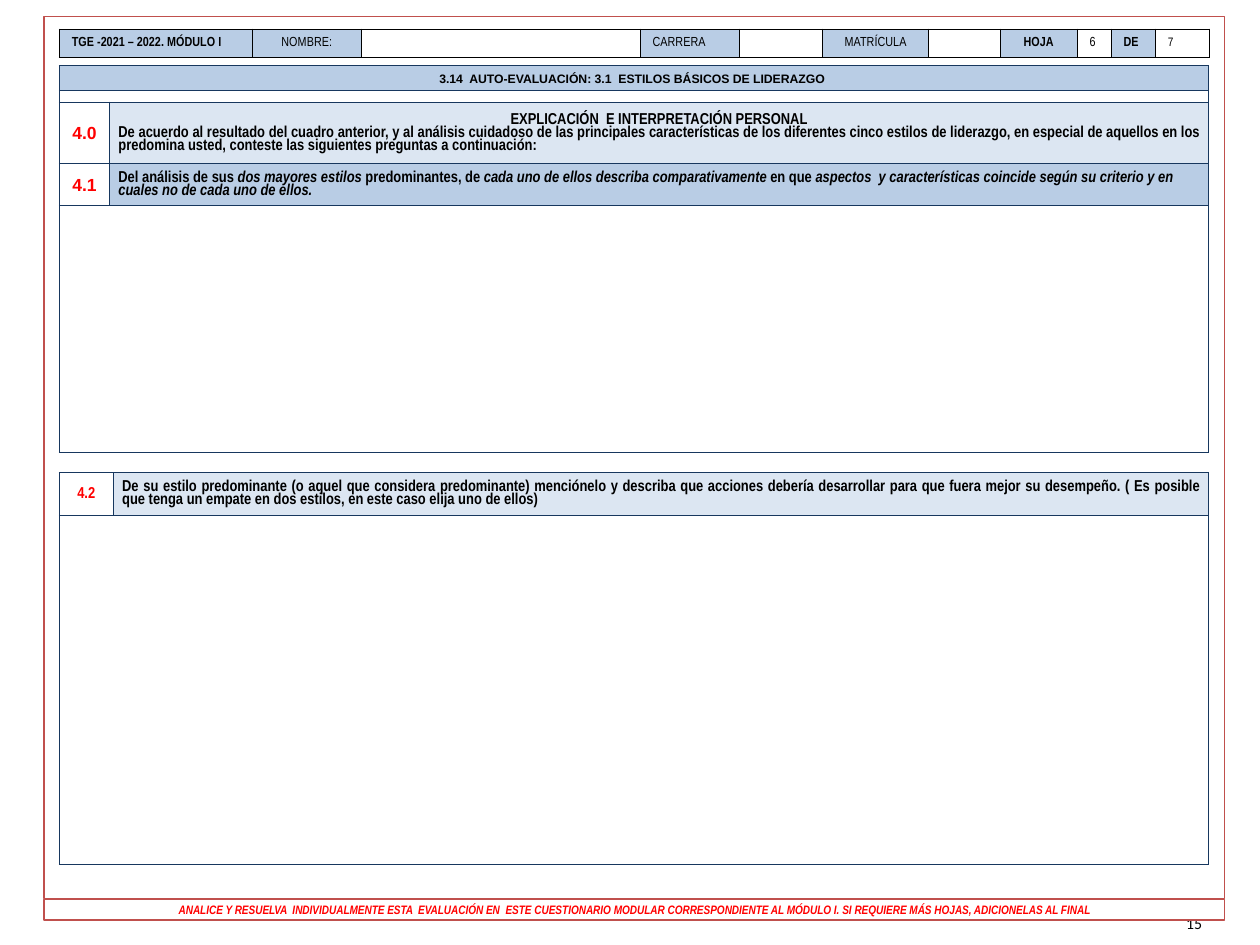
from pptx import Presentation
from pptx import util as u
from pptx.dml.color import RGBColor
from pptx.enum import shapes, text
from pptx.oxml import parse_xml
from pptx.oxml.ns import nsdecls

BLUE = RGBColor(0xB9, 0xCD, 0xE5)
PALE = RGBColor(0xDC, 0xE6, 0xF2)
NAVY = RGBColor(0x17, 0x37, 0x5E)
BRICK = RGBColor(0xC0, 0x50, 0x4D)
RED = RGBColor(0xFF, 0, 0)
BLACK = RGBColor(0, 0, 0)
WHITE = RGBColor(0xFF, 0xFF, 0xFF)
LEFT, MID, RIGHT, JUST = (text.PP_ALIGN.LEFT, text.PP_ALIGN.CENTER,
                          text.PP_ALIGN.RIGHT, text.PP_ALIGN.JUSTIFY)
NARROW = "Arial Narrow"


class Sheet:
    def __init__(self, slide):
        self.slide = slide

    def prose(self, para, runs, size, font=NARROW, color=BLACK, bold=True,
              align=LEFT, space=None):
        para.alignment = align
        para.line_spacing = space
        for words, slant in runs:
            run = para.add_run()
            run.text = words
            face = run.font
            face.name, face.size = font, u.Pt(size)
            face.bold, face.italic = bold, slant
            face.color.rgb = color

    def label(self, box, words, size, font, bold, align):
        frame = self.slide.shapes.add_textbox(*map(u.Inches, box)).text_frame
        frame.word_wrap = True
        frame.vertical_anchor = text.MSO_ANCHOR.MIDDLE
        self.prose(frame.paragraphs[0], [(words, False)], size, font,
                   bold=bold, align=align)

    def rect(self, box, width, fill=None):
        shape = self.slide.shapes.add_shape(
            shapes.MSO_SHAPE.RECTANGLE, *map(u.Inches, box))
        shape.shadow.inherit = False
        if fill is None:
            shape.fill.background()
        else:
            shape.fill.solid()
            shape.fill.fore_color.rgb = fill
        shape.line.color.rgb = BRICK
        shape.line.width = u.Pt(width)
        return shape

    def grid(self, top, cols, rows, edge, pads):
        box = map(u.Inches, (0.47, top, sum(cols), sum(rows)))
        table = self.slide.shapes.add_table(len(rows), len(cols), *box).table
        table.first_row = table.horz_banding = False
        for col, width in zip(table.columns, cols):
            col.width = u.Inches(width)
        for row, height in zip(table.rows, rows):
            row.height = u.Inches(height)
        for cell in table.iter_cells():
            cell.fill.background()
            cell.vertical_anchor = text.MSO_ANCHOR.MIDDLE
            (cell.margin_left, cell.margin_top,
             cell.margin_right, cell.margin_bottom) = map(u.Inches, pads)
            cell.text_frame.paragraphs[0]._p.get_or_add_endParaRPr().set("sz", "100")
            props = cell._tc.get_or_add_tcPr()
            for spot, side in enumerate("LRTB"):
                props.insert(spot, parse_xml(
                    f'<a:ln{side} {nsdecls("a")} w="6350"><a:solidFill>'
                    f'<a:srgbClr val="{edge}"/></a:solidFill></a:ln{side}>'))
        return table

    def cell(self, cell, runs, size, fill=None, **style):
        if fill is not None:
            cell.fill.solid()
            cell.fill.fore_color.rgb = fill
        frame = cell.text_frame
        para = frame.paragraphs[0]
        if para.runs:
            para = frame.add_paragraph()
        self.prose(para, runs, size, **style)


def plain(words):
    return [(words, False)]


def main():
    deck = Presentation()
    deck.slide_width, deck.slide_height = u.Inches(10), u.Inches(7.5)
    sheet = Sheet(deck.slides.add_slide(deck.slide_layouts[6]))
    tight = (0.07, 0.01, 0.07, 0)

    sheet.label((7.31, 7.13, 2.33, 0.4), "15", 9, "Calibri", False, RIGHT)

    first = sheet.grid(0.52, (0.4, 8.72), (0.2, 0.09, 0.49, 0.33, 1.96), NAVY, tight)
    for row in (0, 1, 4):
        first.cell(row, 0).merge(first.cell(row, 1))
    sheet.cell(first.cell(0, 0),
               plain("3.14  AUTO-EVALUACIÓN: 3.1  ESTILOS BÁSICOS DE LIDERAZGO "),
               7, BLUE, font="Arial", align=MID)
    for row, mark in ((2, "4.0"), (3, "4.1")):
        sheet.cell(first.cell(row, 0), plain(mark), 10, font="Arial",
                   color=RED, align=MID)
    sheet.cell(first.cell(2, 1), plain("EXPLICACIÓN  E INTERPRETACIÓN PERSONAL"),
               9, PALE, align=MID, space=0.85)
    sheet.cell(first.cell(2, 1), plain(
        "De acuerdo al resultado del cuadro anterior, y al análisis cuidadoso de las "
        "principales características de los diferentes cinco estilos de liderazgo, en "
        "especial de aquellos en los predomina usted, conteste las siguientes preguntas "
        "a continuación:"), 9, align=JUST, space=0.85)
    sheet.cell(first.cell(3, 1), [
        ("Del análisis de sus ", False),
        ("dos mayores estilos", True),
        (" predominantes, de ", False),
        ("cada uno de ellos describa comparativamente", True),
        (" en que ", False),
        ("aspectos  y características coincide según su criterio y en cuales no de "
         "cada uno de ellos.", True)], 9, BLUE, space=0.85)

    sheet.rect((0.35, 0.13, 9.37, 7), 0.75)

    second = sheet.grid(3.75, (0.43, 8.69), (0.34, 2.77), NAVY, tight)
    second.cell(1, 0).merge(second.cell(1, 1))
    sheet.cell(second.cell(0, 0), plain("4.2"), 9, color=RED, align=MID)
    sheet.cell(second.cell(0, 1), plain(
        "De su estilo predominante (o aquel que considera predominante) menciónelo y "
        "describa que acciones debería desarrollar para que fuera mejor su desempeño. "
        "( Es posible que tenga un empate en dos estilos, en este caso elija uno de "
        "ellos)"), 9, PALE, align=JUST, space=0.85)
    sheet.cell(second.cell(1, 0), [], 9, WHITE)

    cols = (1.53, 0.87, 2.21, 0.79, 0.66, 0.84, 0.57, 0.61, 0.27, 0.35, 0.43)
    head = sheet.grid(0.23, cols, (0.22,), BLACK, (0.1, 0.05, 0.1, 0.05))
    items = (
        (0, "TGE -2021 – 2022. MÓDULO I", 7.5, BLUE, True, LEFT),
        (1, "NOMBRE:", 7.5, BLUE, False, MID),
        (2, "", 7.5, WHITE, False, LEFT),
        (3, "CARRERA", 7.5, BLUE, False, LEFT),
        (4, "", 7.5, WHITE, False, LEFT),
        (5, "MATRÍCULA", 7.5, BLUE, False, MID),
        (7, "HOJA", 7.5, BLUE, True, MID),
        (8, "6", 7.5, None, False, LEFT),
        (9, "DE", 7.5, BLUE, True, LEFT),
        (10, "7", 7, None, False, LEFT),
    )
    for col, words, size, fill, bold, align in items:
        runs = plain(words) if words else []
        sheet.cell(head.cell(0, col), runs, size, fill, bold=bold, align=align)

    foot = sheet.rect((0.35, 7.14, 9.37, 0.16), 1, WHITE).text_frame
    foot.vertical_anchor = text.MSO_ANCHOR.MIDDLE
    sheet.prose(foot.paragraphs[0], [(
        "ANALICE Y RESUELVA  INDIVIDUALMENTE ESTA  EVALUACIÓN EN  ESTE CUESTIONARIO "
        "MODULAR CORRESPONDIENTE AL MÓDULO I. SI REQUIERE MÁS HOJAS, ADICIONELAS AL "
        "FINAL", True)], 7, color=RED, align=MID)

    deck.save("out.pptx")


if __name__ == "__main__":
    main()
